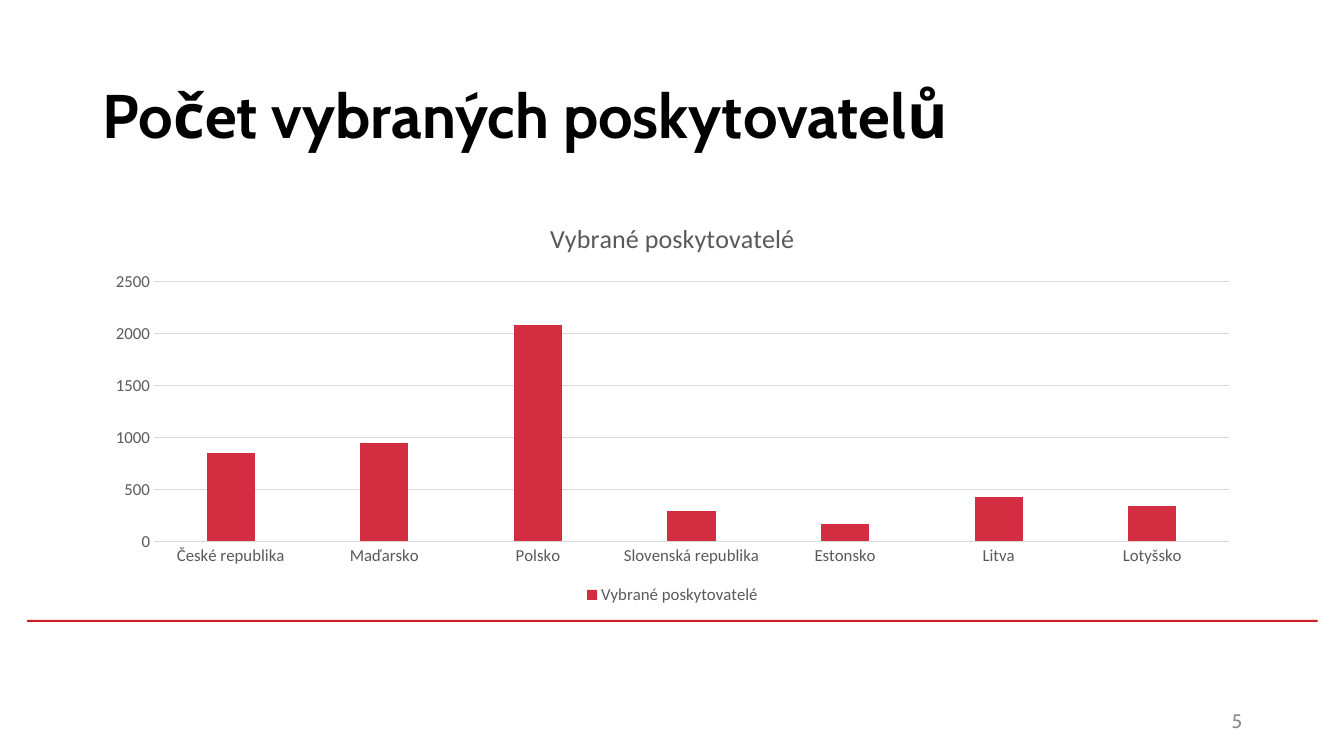
from dataclasses import dataclass

from pptx import Presentation
from pptx.chart.data import CategoryChartData
from pptx.dml.color import RGBColor
from pptx.enum.chart import XL_CHART_TYPE as ChartType
from pptx.enum.chart import XL_LEGEND_POSITION as LegendPosition
from pptx.enum.chart import XL_TICK_MARK as TickMark
from pptx.enum.shapes import MSO_SHAPE as Shape
from pptx.enum.text import MSO_ANCHOR as Anchor
from pptx.enum.text import PP_ALIGN as Align
from pptx.util import Inches, Pt

HEADING = "Počet vybraných poskytovatelů"
SERIES = "Vybrané poskytovatelé"
PAGE = "5"
PROVIDERS = {
    "České republika": 850,
    "Maďarsko": 950,
    "Polsko": 2080,
    "Slovenská republika": 290,
    "Estonsko": 170,
    "Litva": 430,
    "Lotyšsko": 340,
}


@dataclass(frozen=True)
class Theme:
    """Colours, fonts and type sizes of the slide."""
    ink: str = "000000"
    label: str = "595959"
    muted: str = "8C8C8C"
    grid: str = "D9D9D9"
    bar: str = "D22D40"
    rule: str = "CD1F21"
    heading_font: str = "Cabin"
    chart_font: str = "Calibri"
    heading_size: float = 44
    chart_title_size: float = 18.6
    label_size: float = 12
    page_size: float = 14


THEME = Theme()
WIDTH, HEIGHT = 13.33, 7.5
LEFT, CONTENT_WIDTH = 0.92, 11.5
PAGE_WIDTH = 3
HEADING_BOX = (LEFT, 0.4, CONTENT_WIDTH, 1.45)
CHART_BOX = (LEFT, 2, CONTENT_WIDTH, 4.04)
RULE_BOX = (0.27, 6.15, 12.8, 0.02)
PAGE_BOX = (LEFT + CONTENT_WIDTH - PAGE_WIDTH, 6.95, PAGE_WIDTH, 0.4)


def inches(box):
    """Convert a box to slide lengths."""
    return [Inches(length) for length in box]


def apply(target, formats):
    """Set each named attribute on the target."""
    for name, value in formats.items():
        setattr(target, name, value)


def style(font, face, size, colour, bold=False):
    """Format a font."""
    apply(font, {"name": face, "size": Pt(size), "bold": bold})
    font.color.rgb = RGBColor.from_string(colour)


def write(frame, text, align, *font_format):
    """Write one vertically centred paragraph."""
    apply(frame, {"text": text, "word_wrap": True, "vertical_anchor": Anchor.MIDDLE})
    paragraph = frame.paragraphs[0]
    paragraph.alignment = align
    style(paragraph.runs[0].font, *font_format)


def add_rule(slide):
    """Draw the red rule below the chart."""
    rule = slide.shapes.add_shape(Shape.RECTANGLE, *inches(RULE_BOX))
    rule.shadow.inherit = False
    rule.fill.solid()
    rule.fill.fore_color.rgb = RGBColor.from_string(THEME.rule)
    rule.line.fill.background()


def add_provider_chart(slide):
    """Add the column chart of providers by country."""
    data = CategoryChartData()
    data.categories = list(PROVIDERS)
    data.add_series(SERIES, list(PROVIDERS.values()))
    chart = slide.shapes.add_chart(
        ChartType.COLUMN_CLUSTERED, *inches(CHART_BOX), data).chart
    label_format = (THEME.chart_font, THEME.label_size, THEME.label)
    style(chart.font, *label_format)

    apply(chart, {"has_title": True, "has_legend": True})
    caption = chart.chart_title.text_frame
    caption.text = SERIES
    style(caption.paragraphs[0].runs[0].font,
          THEME.chart_font, THEME.chart_title_size, THEME.label)
    apply(chart.legend, {"position": LegendPosition.BOTTOM, "include_in_layout": False})
    style(chart.legend.font, *label_format)

    countries, counts = chart.category_axis, chart.value_axis
    for axis in (countries, counts):
        apply(axis, {"major_tick_mark": TickMark.NONE, "minor_tick_mark": TickMark.NONE})
        style(axis.tick_labels.font, *label_format)
    apply(counts, {"minimum_scale": 0, "maximum_scale": 2500,
                   "major_unit": 500, "has_major_gridlines": True})
    counts.format.line.fill.background()
    for line in (countries.format.line, counts.major_gridlines.format.line):
        line.color.rgb = RGBColor.from_string(THEME.grid)
        line.width = Pt(0.75)

    plot = chart.plots[0]
    apply(plot, {"gap_width": 219, "overlap": -27, "vary_by_categories": False})
    bars = plot.series[0].format.fill
    bars.solid()
    bars.fore_color.rgb = RGBColor.from_string(THEME.bar)


def main():
    """Build and save the slide."""
    deck = Presentation()
    apply(deck, {"slide_width": Inches(WIDTH), "slide_height": Inches(HEIGHT)})
    slide = deck.slides.add_slide(deck.slide_layouts[5])
    add_rule(slide)

    heading = slide.shapes.title
    apply(heading, dict(zip(("left", "top", "width", "height"), inches(HEADING_BOX))))
    write(heading.text_frame, HEADING, Align.LEFT,
          THEME.heading_font, THEME.heading_size, THEME.ink, True)

    add_provider_chart(slide)
    page = slide.shapes.add_textbox(*inches(PAGE_BOX))
    write(page.text_frame, PAGE, Align.RIGHT,
          THEME.heading_font, THEME.page_size, THEME.muted)
    deck.save("out.pptx")


if __name__ == "__main__":
    main()
